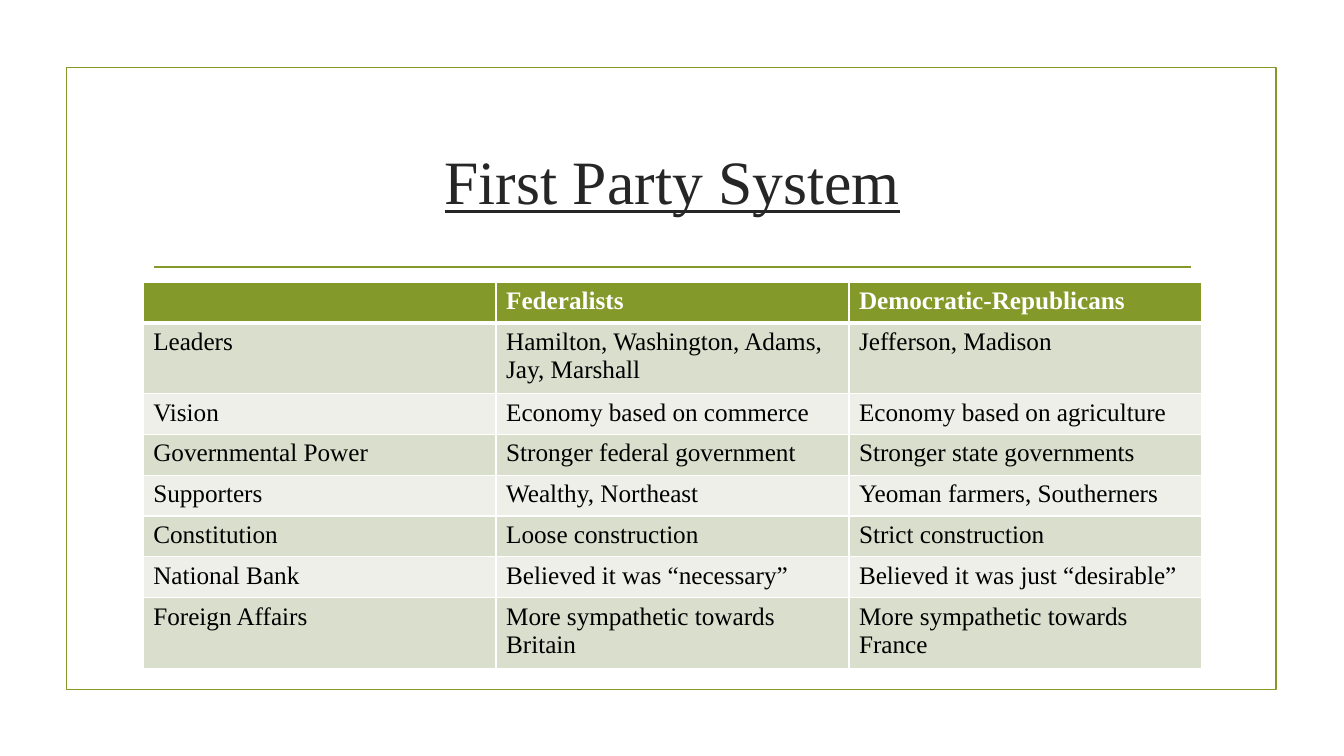
from lxml import etree
from pptx import Presentation
from pptx.dml.color import RGBColor
from pptx.enum.shapes import MSO_CONNECTOR, MSO_SHAPE
from pptx.enum.text import MSO_ANCHOR, PP_ALIGN
from pptx.oxml.ns import qn
from pptx.util import Inches, Pt

RECTANGLE = MSO_SHAPE.RECTANGLE
STRAIGHT = MSO_CONNECTOR.STRAIGHT
MIDDLE = MSO_ANCHOR.MIDDLE
CENTER = PP_ALIGN.CENTER

FONT = "Times New Roman"
GREEN, WHITE, BLACK, CHARCOAL = "83992A", "FFFFFF", "000000", "262626"
BANDS = ("D9DECD", "EDEFE8")

PARTY_ROWS = [
    ("", "Federalists", "Democratic-Republicans"),
    ("Leaders", "Hamilton, Washington, Adams, Jay, Marshall", "Jefferson, Madison"),
    ("Vision", "Economy based on commerce", "Economy based on agriculture"),
    ("Governmental Power", "Stronger federal government", "Stronger state governments"),
    ("Supporters", "Wealthy, Northeast", "Yeoman farmers, Southerners"),
    ("Constitution", "Loose construction", "Strict construction"),
    ("National Bank", "Believed it was “necessary”", "Believed it was just “desirable”"),
    ("Foreign Affairs", "More sympathetic towards Britain", "More sympathetic towards France"),
]


def color(hex_string):
    return RGBColor.from_string(hex_string)


def set_font(font, size, hex_string, bold=False):
    font.name = FONT
    font.size = Pt(size)
    font.bold = bold
    font.color.rgb = color(hex_string)


def set_line(line):
    line.color.rgb = color(GREEN)
    line.width = Pt(1.25)


def add_frame(slide, left, top, width, height):
    frame = slide.shapes.add_shape(
        RECTANGLE, Inches(left), Inches(top), Inches(width), Inches(height))
    frame.shadow.inherit = False
    frame.fill.background()
    set_line(frame.line)


def add_title(slide, left, top, width, height):
    """Place the underlined title and the rule beneath it."""
    rule_y = Inches(top + height + 0.15)
    rule = slide.shapes.add_connector(
        STRAIGHT, Inches(left + 0.11), rule_y, Inches(left + width - 0.11), rule_y)
    set_line(rule.line)
    etree.SubElement(rule._element.spPr, qn("a:effectLst"))

    title = slide.shapes.add_textbox(
        Inches(left), Inches(top), Inches(width), Inches(height)).text_frame
    title.word_wrap = True
    title.vertical_anchor = MIDDLE
    paragraph = title.paragraphs[0]
    paragraph.text = "First Party System"
    paragraph.alignment = CENTER
    set_font(paragraph.font, 44, CHARCOAL)
    paragraph.font.underline = True


def set_borders(cell, top, bottom):
    """Give a cell white borders; top and bottom widths are in points."""
    properties = cell._tc.get_or_add_tcPr()
    for side, width in (("L", 1), ("R", 1), ("T", top), ("B", bottom)):
        border = etree.SubElement(properties, qn(f"a:ln{side}"), w=str(Pt(width)))
        fill = etree.SubElement(border, qn("a:solidFill"))
        etree.SubElement(fill, qn("a:srgbClr"), val=WHITE)


def add_party_table(slide, left, top, width, row_height):
    row_count, column_count = len(PARTY_ROWS), len(PARTY_ROWS[0])
    table = slide.shapes.add_table(
        row_count, column_count, Inches(left), Inches(top),
        Inches(width), Inches(row_height * row_count)).table
    for r, entries in enumerate(PARTY_ROWS):
        header = r == 0
        table.rows[r].height = Inches(row_height)
        for c, entry in enumerate(entries):
            cell = table.cell(r, c)
            set_borders(cell, top=3 if r == 1 else 1, bottom=3 if header else 1)
            cell.fill.solid()
            cell.fill.fore_color.rgb = color(GREEN if header else BANDS[(r - 1) % 2])
            paragraph = cell.text_frame.paragraphs[0]
            paragraph.text = entry
            set_font(paragraph.font, 18, WHITE if header else BLACK, bold=header)


def main():
    presentation = Presentation()
    presentation.slide_width = Inches(13.33)
    presentation.slide_height = Inches(7.5)
    slide = presentation.slides.add_slide(presentation.slide_layouts[6])
    add_frame(slide, 0.66, 0.67, 12, 6.17)
    add_title(slide, 1.42, 1.07, 10.5, 1.43)
    add_party_table(slide, 1.42, 2.8, 10.5, 0.405)
    presentation.save("out.pptx")


if __name__ == "__main__":
    main()
